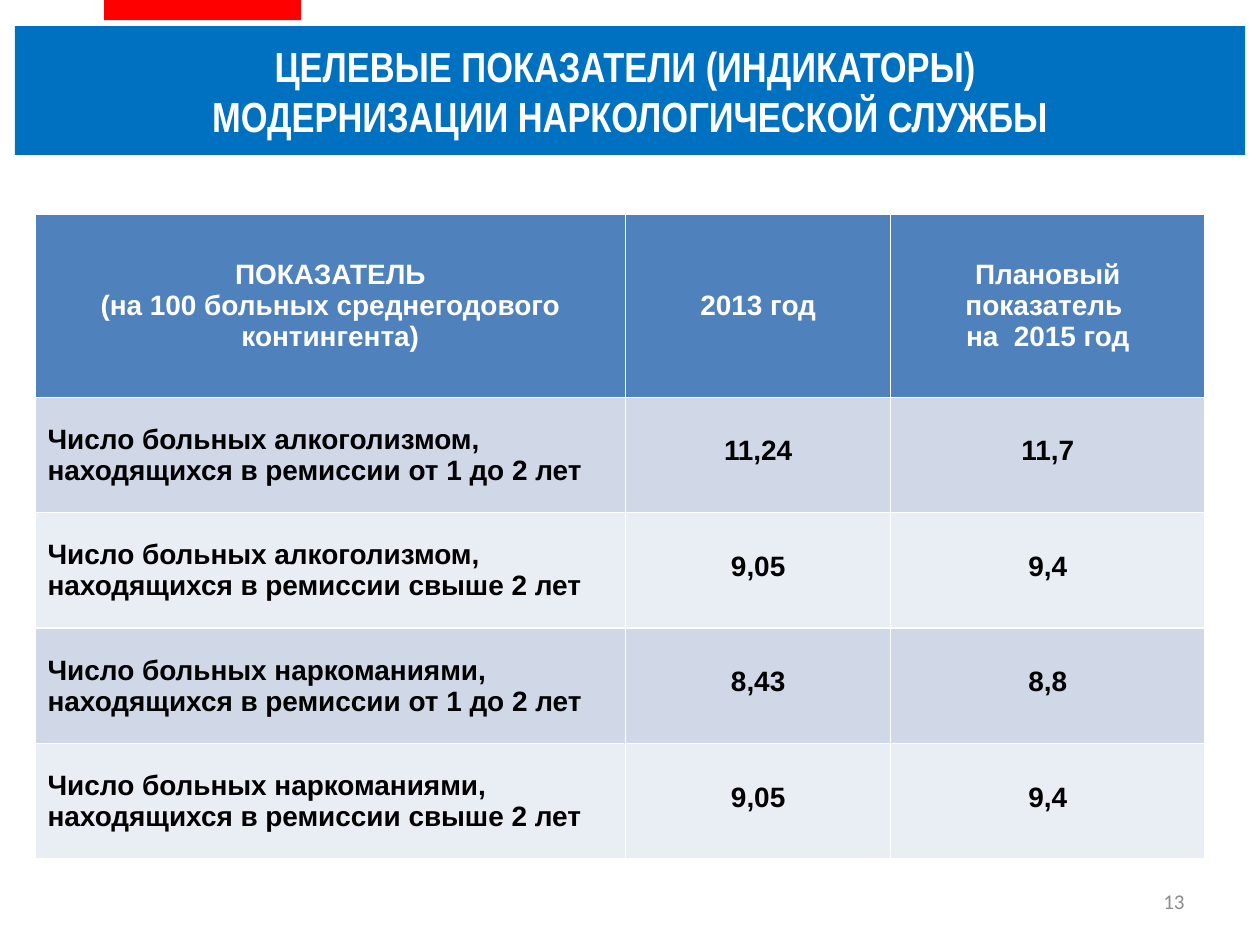
from dataclasses import dataclass

from pptx import Presentation
from pptx.dml.color import RGBColor
from pptx.enum.shapes import MSO_SHAPE
from pptx.enum.text import MSO_ANCHOR, MSO_AUTO_SIZE, PP_ALIGN
from pptx.util import Pt

RECT = MSO_SHAPE.RECTANGLE
TOP, MIDDLE = MSO_ANCHOR.TOP, MSO_ANCHOR.MIDDLE
LEFT, CENTER, RIGHT = PP_ALIGN.LEFT, PP_ALIGN.CENTER, PP_ALIGN.RIGHT
NO_FIT = MSO_AUTO_SIZE.NONE
TITLE_ONLY = 5


@dataclass(frozen=True)
class Theme:
    banner: str = "0070C0"
    accent: str = "FF0000"
    header: str = "4F81BD"
    bands: tuple = ("D0D8E8", "E9EDF4")
    light: str = "FFFFFF"
    dark: str = "000000"
    muted: str = "8C8C8C"
    title_font: str = "Arial Narrow"
    table_font: str = "Arial"
    number_font: str = "Calibri"
    title_size: int = 24
    table_size: int = 16
    number_size: int = 12


class SlideBuilder:
    """Draws on one slide in the theme's style; lengths are in points."""

    def __init__(self, slide, theme):
        self.s = slide
        self.theme = theme

    def paint(self, target, color):
        target.fill.solid()
        target.fill.fore_color.rgb = RGBColor.from_string(color)

    def place(self, sp, box):
        for name, value in zip(("left", "top", "width", "height"), box):
            setattr(sp, name, Pt(value))

    def set_text(self, tf, text, align, color, **font):
        """Fill a text frame, one paragraph for each line of the text."""
        tf.text = text
        for p in tf.paragraphs:
            p.alignment = align
            for r in p.runs:
                r.font.color.rgb = RGBColor.from_string(color)
                for name, value in font.items():
                    setattr(r.font, name, value)

    def frame(self, tf):
        for name, value in {"word_wrap": True, "auto_size": NO_FIT,
                            "vertical_anchor": MIDDLE}.items():
            setattr(tf, name, value)

    def title(self, text, box):
        t = self.theme
        sp = self.s.shapes.title
        self.place(sp, box)
        self.paint(sp, t.banner)
        self.frame(sp.text_frame)
        self.set_text(sp.text_frame, text, CENTER, t.light,
                      name=t.title_font, size=Pt(t.title_size), bold=True)

    def bar(self, box, color):
        sp = self.s.shapes.add_shape(RECT, *map(Pt, box))
        sp.shadow.inherit = False
        self.paint(sp, color)
        sp.line.fill.background()

    def cell(self, cell, text, fill, align, color):
        t = self.theme
        self.paint(cell, fill)
        cell.vertical_anchor = MIDDLE
        self.set_text(cell.text_frame, text, align, color,
                      name=t.table_font, size=Pt(t.table_size), bold=True)

    def table(self, rows, box, widths, heights, value_top):
        """Header row plus banded rows; values start value_top below the row's top."""
        t = self.theme
        table = self.s.shapes.add_table(
            len(rows), len(widths), *map(Pt, box)).table
        for column, width in zip(table.columns, widths):
            column.width = Pt(width)
        for row, height in zip(table.rows, heights):
            row.height = Pt(height)
        for i, row in enumerate(rows):
            fill = t.bands[(i - 1) % 2] if i else t.header
            for j, text in enumerate(row):
                cell = table.cell(i, j)
                align = LEFT if i and j == 0 else CENTER
                self.cell(cell, text, fill, align, t.dark if i else t.light)
                if i and j:
                    cell.vertical_anchor = TOP
                    cell.margin_top = Pt(value_top)

    def page_number(self, text, box):
        t = self.theme
        tf = self.s.shapes.add_textbox(*map(Pt, box)).text_frame
        self.frame(tf)
        self.set_text(tf, text, RIGHT, t.muted,
                      name=t.number_font, size=Pt(t.number_size))


ROWS = [
    ("ПОКАЗАТЕЛЬ\n(на 100 больных среднегодового контингента)",
     "2013 год", "Плановый показатель \nна  2015 год"),
    ("Число больных алкоголизмом, находящихся в ремиссии от 1 до 2 лет",
     "11,24", "11,7"),
    ("Число больных алкоголизмом, находящихся в ремиссии свыше 2 лет",
     "9,05", "9,4"),
    ("Число больных наркоманиями, находящихся в ремиссии от 1 до 2 лет",
     "8,43", "8,8"),
    ("Число больных наркоманиями, находящихся в ремиссии свыше 2 лет",
     "9,05", "9,4"),
]


def main():
    prs = Presentation()
    prs.slide_width, prs.slide_height = Pt(720), Pt(540)
    theme = Theme()
    s = SlideBuilder(prs.slides.add_slide(prs.slide_layouts[TITLE_ONLY]), theme)
    s.title("ЦЕЛЕВЫЕ ПОКАЗАТЕЛИ (ИНДИКАТОРЫ) \n"
            "МОДЕРНИЗАЦИИ НАРКОЛОГИЧЕСКОЙ СЛУЖБЫ", (8.5, 15, 703, 73.5))
    s.bar((59.5, 0, 112.5, 11.5), theme.accent)
    widths = (337.5, 151.5, 179.5)
    heights = [104.5] + [66] * (len(ROWS) - 1)
    s.table(ROWS, (20, 122.5, sum(widths), sum(heights)), widths, heights, 22)
    s.page_number("13", (516, 500.5, 168, 28.5))
    prs.save("out.pptx")


if __name__ == "__main__":
    main()
